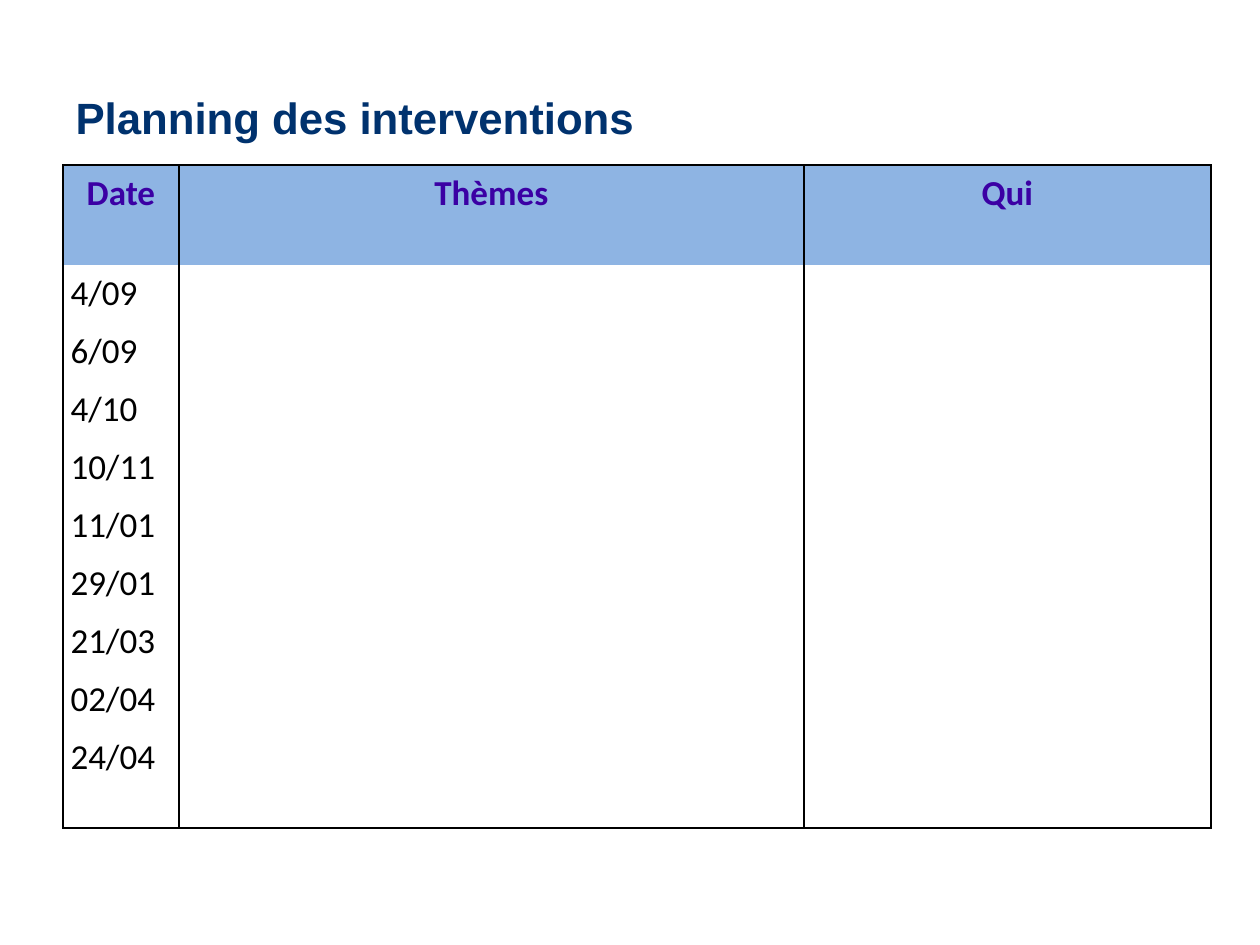
import pptx
import pptx.dml.color
import pptx.enum.text
import pptx.oxml
import pptx.oxml.ns
import pptx.util

Inches = pptx.util.Inches
Align = pptx.enum.text.PP_ALIGN
Anchor = pptx.enum.text.MSO_ANCHOR

COLORS = {"title": "00326E", "head": "3B00A4", "band": "8EB4E3",
          "text": "000000", "line": "000000"}
HEADS = ["Date", "Thèmes", "Qui"]
DATES = ["4/09", "6/09", "4/10", "10/11", "11/01",
         "29/01", "21/03", "02/04", "24/04"]
WIDTHS = [0.92, 4.96, 3.23]
HEIGHTS = [0.79] + [0.45] * 8 + [0.79]


def add_run(para, text, font, size, color, bold=False):
    run = para.add_run()
    run.text = text
    run.font.name = font
    run.font.size = pptx.util.Pt(size)
    run.font.bold = bold
    run.font.color.rgb = pptx.dml.color.RGBColor.from_string(COLORS[color])


def set_lines(cell, sides):
    """Draw a 1 pt line on the given sides and none on the others."""
    props = cell._tc.get_or_add_tcPr()
    for index, side in enumerate("LRTB"):
        paint = "<a:noFill/>"
        if side in sides:
            paint = f'<a:solidFill><a:srgbClr val="{COLORS["line"]}"/></a:solidFill>'
        line = pptx.oxml.parse_xml(
            f'<a:ln{side} {pptx.oxml.ns.nsdecls("a")} w="12700">{paint}</a:ln{side}>')
        props.insert(index, line)


def add_title(slide):
    title = slide.shapes.title
    title.left, title.top = Inches(0.5), Inches(0.3)
    title.width, title.height = Inches(9), Inches(1.25)
    frame = title.text_frame
    frame.vertical_anchor = Anchor.MIDDLE
    para = frame.paragraphs[0]
    para.alignment = Align.LEFT
    add_run(para, "Planning des interventions", "Arial", 25, "title", True)


def fill_cell(cell, text, head, last):
    if head:
        cell.fill.solid()
        cell.fill.fore_color.rgb = pptx.dml.color.RGBColor.from_string(COLORS["band"])
    else:
        cell.fill.background()
    set_lines(cell, "LR" + ("T" if head else "") + ("B" if last else ""))
    if text:
        cell.margin_left = cell.margin_right = Inches(0.06)
        cell.margin_top = cell.margin_bottom = Inches(0.06)
        para = cell.text_frame.paragraphs[0]
        para.alignment = Align.CENTER if head else Align.LEFT
        add_run(para, text, "Calibri", 20, "head" if head else "text", head)


def add_plan(slide):
    rows = [HEADS] + [[date, "", ""] for date in DATES]
    table = slide.shapes.add_table(
        len(rows), len(HEADS), Inches(0.5), Inches(1.31),
        Inches(sum(WIDTHS)), Inches(sum(HEIGHTS))).table
    table.first_row = table.horz_banding = False
    for col, width in zip(table.columns, WIDTHS):
        col.width = Inches(width)
    for r, texts in enumerate(rows):
        table.rows[r].height = Inches(HEIGHTS[r])
        for c, text in enumerate(texts):
            fill_cell(table.cell(r, c), text, r == 0, r == len(rows) - 1)


def main():
    deck = pptx.Presentation()
    deck.slide_width, deck.slide_height = Inches(10), Inches(7.5)
    slide = deck.slides.add_slide(deck.slide_layouts[5])  # title only
    add_title(slide)
    add_plan(slide)
    deck.save("out.pptx")


if __name__ == "__main__":
    main()
